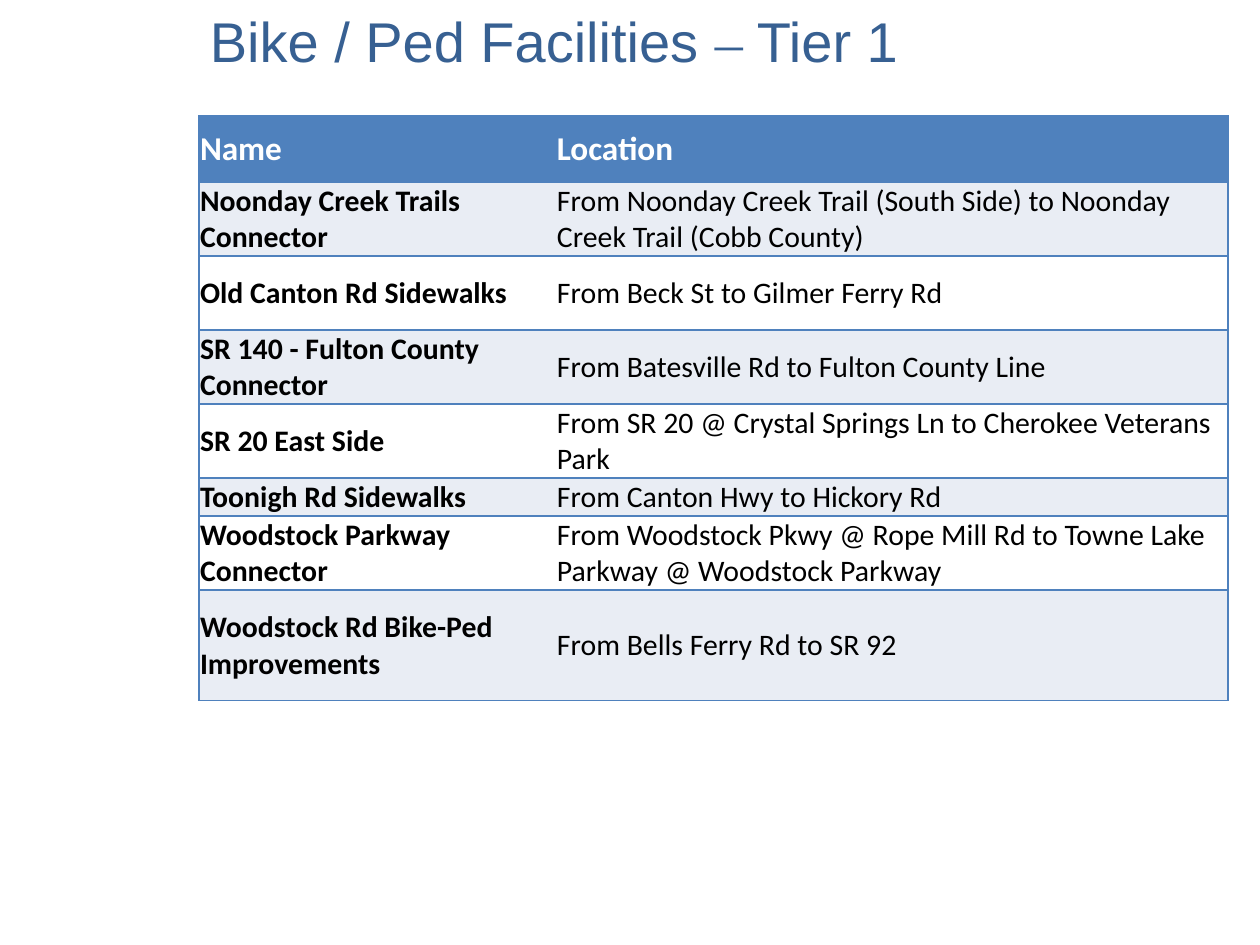
from lxml.etree import SubElement
from pptx import Presentation
from pptx.dml.color import RGBColor
from pptx.enum.text import MSO_ANCHOR
from pptx.oxml.ns import qn
from pptx.util import Emu, Pt

BLUE, BAND, WHITE, BLACK, NAVY = "4F81BD", "E9EDF4", "FFFFFF", "000000", "376092"

ROWS = [
    ("Name", "Location"),
    ("Noonday Creek Trails Connector",
     "From Noonday Creek Trail (South Side) to Noonday Creek Trail (Cobb County)"),
    ("Old Canton Rd Sidewalks", "From Beck St to Gilmer Ferry Rd"),
    ("SR 140 - Fulton County Connector", "From Batesville Rd to Fulton County Line"),
    ("SR 20 East Side", "From SR 20 @ Crystal Springs Ln to Cherokee Veterans Park"),
    ("Toonigh Rd Sidewalks", "From Canton Hwy to Hickory Rd"),
    ("Woodstock Parkway Connector",
     "From Woodstock Pkwy @ Rope Mill Rd to Towne Lake Parkway @ Woodstock Parkway"),
    ("Woodstock Rd Bike-Ped Improvements", "From Bells Ferry Rd to SR 92"),
]
WIDTHS = [357, 672]
HEIGHTS = [66, 74, 74, 74, 74, 38, 74, 111]


def px(n):
    return Emu(round(n * 914400 / 126))


def color(code):
    return RGBColor.from_string(code)


class Deck:
    def __init__(self):
        self.prs = Presentation()
        self.prs.slide_width, self.prs.slide_height = px(1260), px(945)
        self.slide = self.prs.slides.add_slide(self.prs.slide_layouts[6])

    def run(self, para, text, size, face, code, bold=False):
        run = para.add_run()
        run.text = text
        font = run.font
        font.size, font.name, font.bold = Pt(size), face, bold
        font.color.rgb = color(code)

    def title(self, x, y, w, h, parts):
        frame = self.slide.shapes.add_textbox(px(x), px(y), px(w), px(h)).text_frame
        frame.word_wrap = True
        frame.margin_left = frame.margin_right = 0
        frame.margin_top = frame.margin_bottom = 0
        para = frame.paragraphs[0]
        para.line_spacing = Pt(30)
        for text, face in parts:
            self.run(para, text, 32, face, NAVY)

    def edges(self, cell, open_side):
        props = cell._tc.get_or_add_tcPr()
        for side in ("lnL", "lnR", "lnT", "lnB"):
            line = SubElement(props, qn("a:" + side), w=str(Pt(1)))
            if side == open_side:
                SubElement(line, qn("a:noFill"))
            else:
                fill = SubElement(line, qn("a:solidFill"))
                SubElement(fill, qn("a:srgbClr"), val=BLUE)

    def cell(self, cell, text, row, col):
        head = row == 0
        # The line between the two columns stays open
        self.edges(cell, "lnL" if col else "lnR")
        cell.fill.solid()
        cell.fill.fore_color.rgb = color(BLUE if head else BAND if row % 2 else WHITE)
        cell.vertical_anchor = MSO_ANCHOR.MIDDLE
        cell.margin_left = cell.margin_right = cell.margin_top = px(1)
        cell.margin_bottom = 0
        self.run(cell.text_frame.paragraphs[0], text, 19 if head else 17, "Calibri",
                 WHITE if head else BLACK, head or col == 0)

    def table(self, x, y, widths, heights, rows):
        table = self.slide.shapes.add_table(
            len(rows), len(widths), px(x), px(y),
            px(sum(widths)), px(sum(heights))).table
        for col, width in zip(table.columns, widths):
            col.width = px(width)
        for row, height in zip(table.rows, heights):
            row.height = px(height)
        for r, texts in enumerate(rows):
            for c, text in enumerate(texts):
                self.cell(table.cell(r, c), text, r, c)


def main():
    deck = Deck()
    # Heading
    deck.title(210, 21, 1018, 111, [("Bike / Ped Facilities ", "Arial"),
                                    ("– ", "Times New Roman"), ("Tier 1", "Arial")])
    # Project list
    deck.table(199, 116, WIDTHS, HEIGHTS, ROWS)
    deck.prs.save("out.pptx")


if __name__ == "__main__":
    main()
